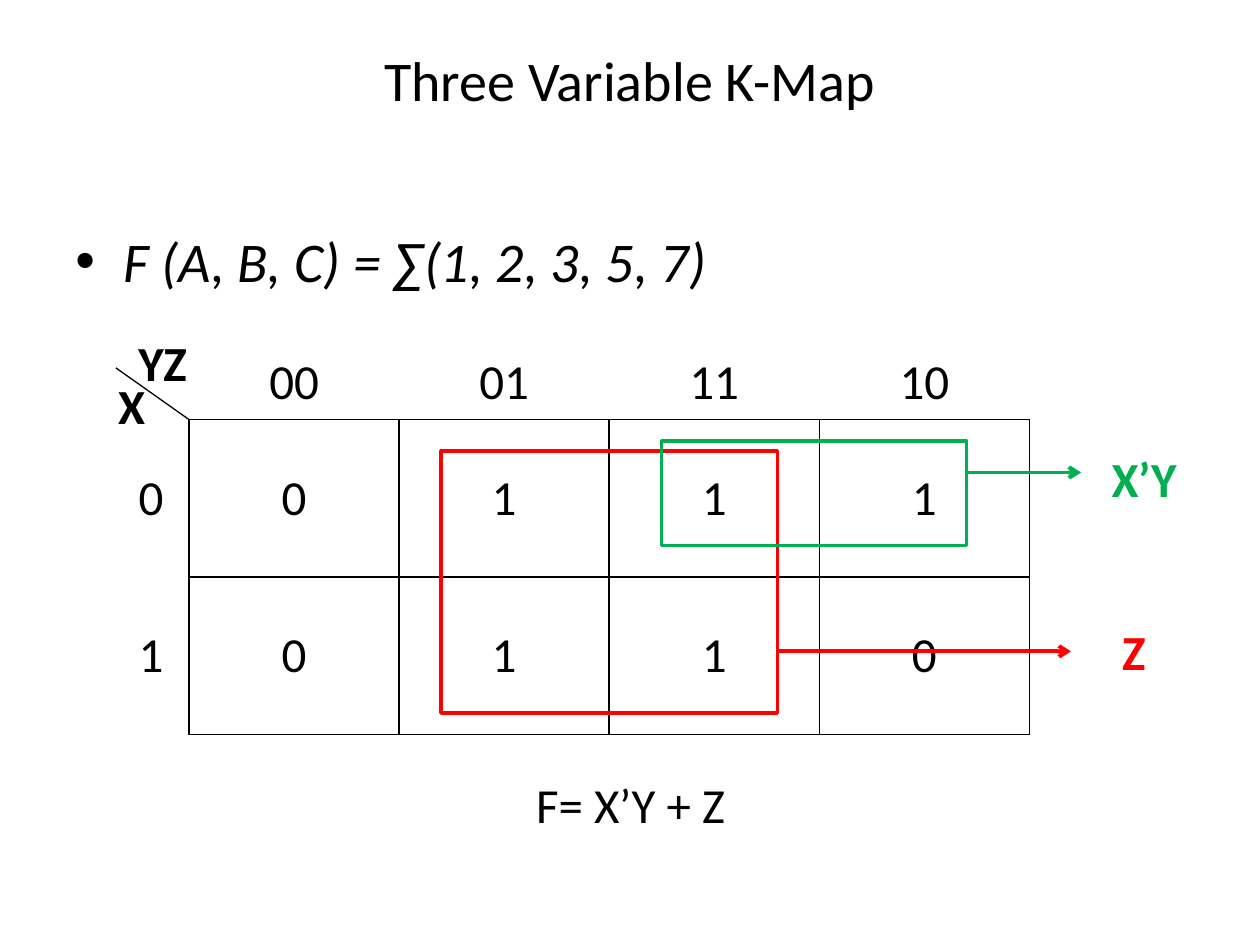
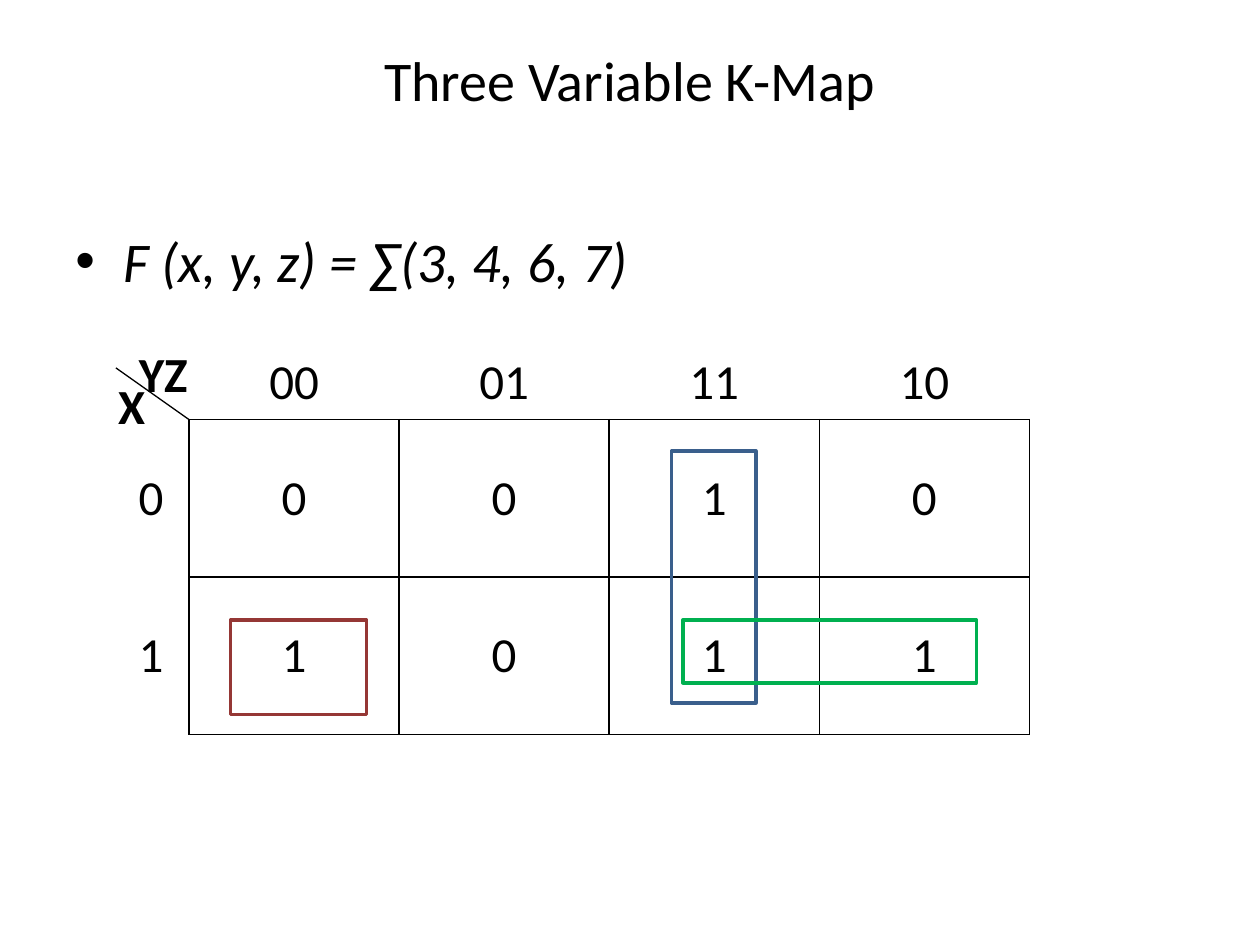
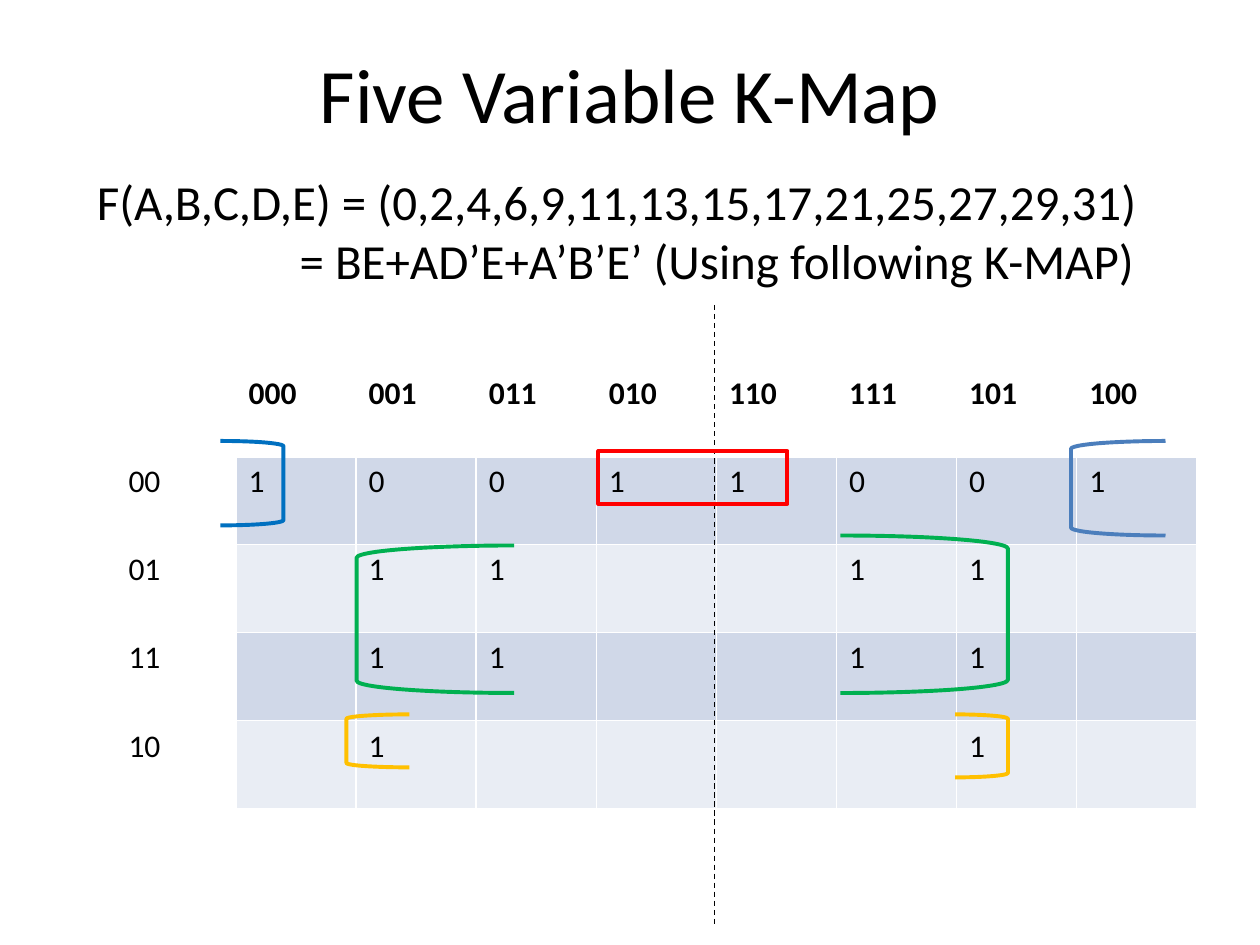
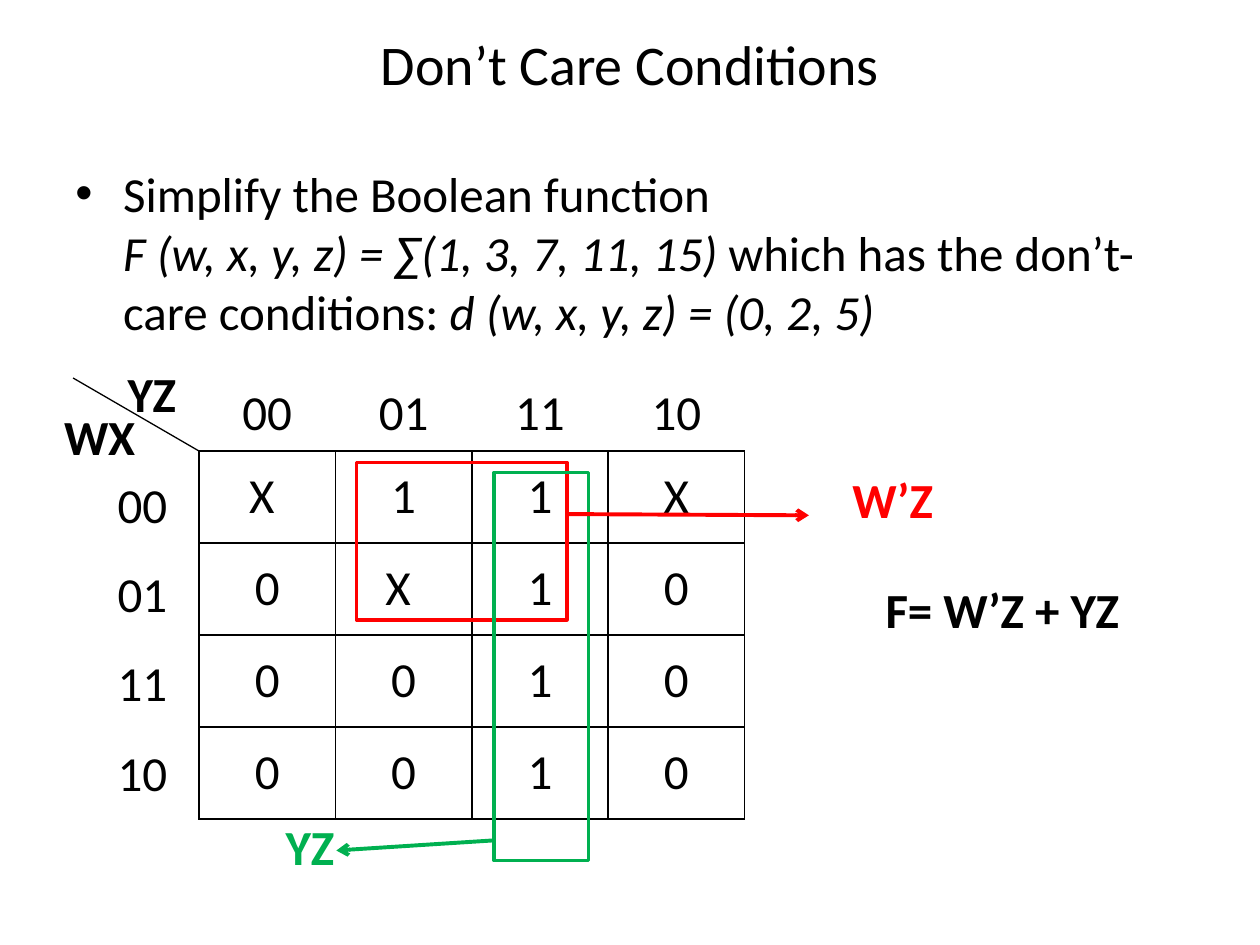
from lxml import etree
from pptx import Presentation
from pptx.dml.color import RGBColor
from pptx.enum.dml import MSO_LINE_DASH_STYLE as Dash
from pptx.enum.shapes import MSO_CONNECTOR, MSO_SHAPE as Shape
from pptx.enum.text import MSO_ANCHOR as Anchor, PP_ALIGN as Align
from pptx.oxml.ns import qn
from pptx.util import Inches, Pt

# Shared look
FONT = "Calibri"
BLACK = RGBColor(0x00, 0x00, 0x00)
WHITE = RGBColor(0xFF, 0xFF, 0xFF)
RED = RGBColor(0xFF, 0x00, 0x00)
GREEN = RGBColor(0x00, 0xB0, 0x50)
NAVY = RGBColor(0x3A, 0x5F, 0x8C)
MAROON = RGBColor(0x95, 0x37, 0x35)
BLUE = RGBColor(0x00, 0x70, 0xC0)
STEEL = RGBColor(0x4B, 0x7E, 0xBC)
AMBER = RGBColor(0xFF, 0xC0, 0x00)
BANDS = [RGBColor(0xD0, 0xD8, 0xE8), RGBColor(0xE9, 0xED, 0xF4)]
PLAIN_TABLE = "{2D5ABB26-0587-4C30-8999-92F81FD0307C}"
TEXT_SIZE = 28
GRAY_CODE = ["00", "01", "11", "10"]

# Content: boxes are (left, top, width, height) in inches
THREE_VARIABLE = {
    "title": "Three Variable K-Map", "title_box": (0.5, 0, 9, 1.25),
    "body_box": (0.5, 1.75, 9, 4.95), "body_size": 32,
    "grid_box": (1.5, 3.33, 6.67, 2.5),
    "columns_box": (1.5, 2.75, 6.67, 0.57),
    "rows_box": (1, 3.33, 0.5, 2.5), "row_names": ["0", "1"], "rows_align": Align.LEFT,
    "corner": ((0.92, 2.92), (1.5, 3.33)),
}
SUM_OF_FIVE = THREE_VARIABLE | {
    "body": [("F (A, B, C) = ∑(1, 2, 3, 5, 7)", True)],
    "values": ["0111", "0110"],
    "groups": [((3.5, 3.58, 2.67, 2.08), RED), ((5.25, 3.5, 2.42, 0.83), GREEN)],
    "arrows": [((7.67, 3.75), (8.58, 3.75), GREEN), ((6.17, 5.17), (8.5, 5.17), RED)],
    "labels": [
        ("YZ", (0.83, 2.58, 0.92, 0.58), BLACK, True),
        ("X", (0.67, 2.92, 0.75, 0.58), BLACK, True),
        ("X’Y", (8.58, 3.5, 1, 0.58), GREEN, True),
        ("Z", (8.5, 4.67, 1, 1), RED, True),
        ("F= X’Y + Z", (1.67, 5.92, 6.67, 0.92), BLACK, False),
    ],
}
SUM_OF_FOUR = THREE_VARIABLE | {
    "body": [("F (x, y, z) = ∑(3, 4, 6, 7)", True)],
    "values": ["0010", "1011"],
    "groups": [
        ((5.33, 3.58, 0.67, 2), NAVY),
        ((5.42, 4.92, 2.33, 0.5), GREEN),
        ((1.83, 4.92, 1.08, 0.75), MAROON),
    ],
    "arrows": [],
    "labels": [
        ("YZ", (0.92, 2.67, 0.75, 0.58), BLACK, True),
        ("X", (0.67, 2.92, 0.75, 0.58), BLACK, True),
    ],
}
DONT_CARE = {
    "title": "Don’t Care Conditions", "title_box": (0.5, 0, 9, 1),
    "body": [
        ("Simplify the Boolean function", False),
        ("\n", False),
        ("F (w, x, y, z) = ∑(1, 3, 7, 11, 15) ", True),
        ("which has the don’t-care conditions: ", False),
        ("d (w, x, y, z) = (0, 2, 5)", True),
    ],
    "body_box": (0.5, 1.25, 9, 5.83), "body_size": 28,
    "grid_box": (1.58, 3.58, 4.33, 2.92),
    "values": [["X ", "1", "1", "X"], ["0", "X ", "1", "0"], "0010", "0010"],
    "columns_box": (1.58, 3, 4.33, 0.57),
    "rows_box": (0.67, 3.67, 0.92, 2.83), "row_names": GRAY_CODE,
    "rows_align": Align.CENTER,
    "corner": ((1.58, 3.58), (0.58, 3)),
    "groups": [((2.83, 3.67, 1.67, 1.25), RED), ((3.92, 3.75, 0.75, 3.08), GREEN)],
    "arrows": [((4.5, 4.08), (6.42, 4.09), RED), ((3.92, 6.67), (2.67, 6.75), GREEN)],
    "labels": [
        ("YZ", (0.83, 2.83, 0.75, 0.58), BLACK, True),
        ("WX", (0.25, 3.17, 1.08, 0.58), BLACK, True),
        ("W’Z", (6.5, 3.67, 1.17, 0.58), RED, True),
        ("YZ", (2, 6.42, 0.92, 0.58), GREEN, True),
        ("F= W’Z + YZ", (6.58, 4.5, 2.75, 0.67), BLACK, True),
    ],
}
FIVE_VARIABLE = {
    "title": "Five Variable K-Map", "title_box": (0.5, 0.3, 9, 0.87),
    "formula": ["F(A,B,C,D,E) = (0,2,4,6,9,11,13,15,17,21,25,27,29,31)",
                "= BE+AD’E+A’B’E’ (Using following K-MAP)"],
    "formula_box": (0.67, 1.33, 8.83, 1), "formula_indent": 1.61,
    "grid_box": (0.92, 2.92, 8.58, 3.5),
    "values": [
        ["", "000", "001", "011", "010", "110", "111", "101", "100"],
        ["00", "1", "0", "0", "1", "1", "0", "0", "1"],
        ["01", "", "1", "1", "", "", "1", "1", ""],
        ["11", "", "1", "1", "", "", "1", "1", ""],
        ["10", "", "1", "", "", "", "", "1", ""],
    ],
    "mirror": ((5.67, 2.42), (5.67, 7.33)),
    "groups": [
        (Shape.RECTANGLE, (4.75, 3.58, 1.5, 0.42), RED),
        (Shape.RIGHT_BRACKET, (6.67, 4.25, 1.33, 1.25), GREEN),
        (Shape.LEFT_BRACKET, (2.83, 4.33, 1.25, 1.17), GREEN),
        (Shape.RIGHT_BRACKET, (1.75, 3.5, 0.5, 0.67), BLUE),
        (Shape.LEFT_BRACKET, (8.5, 3.5, 0.75, 0.75), STEEL),
        (Shape.LEFT_BRACKET, (2.75, 5.67, 0.5, 0.42), AMBER),
        (Shape.RIGHT_BRACKET, (7.58, 5.67, 0.42, 0.5), AMBER),
    ],
}


# Building blocks
def inches(box):
    return [Inches(length) for length in box]


def style(paragraph, size=TEXT_SIZE, color=BLACK, bold=False, align=None):
    paragraph.alignment = align
    for run in paragraph.runs:
        run.font.name, run.font.size, run.font.bold = FONT, Pt(size), bold
        run.font.color.rgb = color


def add_titled_slide(deck, title, box, size):
    slide = deck.slides.add_slide(deck.slide_layouts[5])
    heading = slide.shapes.title
    heading.left, heading.top, heading.width, heading.height = inches(box)
    heading.text_frame.text = title
    heading.text_frame.vertical_anchor = Anchor.MIDDLE
    style(heading.text_frame.paragraphs[0], size, align=Align.CENTER)
    return slide


def add_text(slide, text, box, anchor=Anchor.MIDDLE, **look):
    frame = slide.shapes.add_textbox(*inches(box)).text_frame
    frame.word_wrap = True
    frame.vertical_anchor = anchor
    frame.text = text
    for paragraph in frame.paragraphs:
        style(paragraph, **look)
    return frame


def add_bullet(slide, pieces, box, size):
    paragraph = add_text(slide, "", box, Anchor.TOP).paragraphs[0]
    for text, italic in pieces:
        if text == "\n":
            paragraph.add_line_break()
            continue
        run = paragraph.add_run()
        run.text, run.font.italic = text, italic
    style(paragraph, size)
    paragraph.space_before = Pt(size * 0.2)
    props = paragraph._p.get_or_add_pPr()
    props.set("marL", str(Inches(0.38)))
    props.set("indent", str(-Inches(0.38)))
    etree.SubElement(props, qn("a:buFont"), typeface="Arial")
    etree.SubElement(props, qn("a:buChar"), char="•")


def add_group(slide, preset, box, color, width):
    group = slide.shapes.add_shape(preset, *inches(box))
    group.shadow.inherit = False
    group.fill.background()
    group.line.color.rgb, group.line.width = color, Pt(width)


def add_line(slide, start, end, color=BLACK, width=0.75, arrow=False):
    line = slide.shapes.add_connector(MSO_CONNECTOR.STRAIGHT, *inches(start + end))
    line.line.color.rgb, line.line.width = color, Pt(width)
    if arrow:
        etree.SubElement(line.line._get_or_add_ln(), qn("a:tailEnd"), type="arrow")
    etree.SubElement(line._element.spPr, qn("a:effectLst"))
    return line


def set_border(cell, side, color, width):
    edge = etree.SubElement(cell._tc.get_or_add_tcPr(), qn(f"a:ln{side}"), w=str(Pt(width)))
    fill = etree.SubElement(edge, qn("a:solidFill"))
    etree.SubElement(fill, qn("a:srgbClr"), val=str(color))


def add_grid(slide, rows, box, border=None, anchor=Anchor.MIDDLE, **look):
    table = slide.shapes.add_table(len(rows), len(rows[0]), *inches(box)).table
    table.first_row = table.horz_banding = False
    table._tbl.tblPr.find(qn("a:tableStyleId")).text = PLAIN_TABLE
    for column in table.columns:
        column.width = Inches(box[2] / len(rows[0]))
    for row, values in zip(table.rows, rows):
        row.height = Inches(box[3] / len(rows))
        for cell, value in zip(row.cells, values):
            cell.text = value
            cell.vertical_anchor = anchor
            style(cell.text_frame.paragraphs[0], **look)
            if border is not None:
                for side in "LRTB":
                    set_border(cell, side, border, 1)
            cell.fill.background()
    return table


# Slides
def build_map(deck, kmap):
    slide = add_titled_slide(deck, kmap["title"], kmap["title_box"], 32)
    add_bullet(slide, kmap["body"], kmap["body_box"], kmap["body_size"])
    add_grid(slide, kmap["values"], kmap["grid_box"], BLACK, align=Align.CENTER)
    add_grid(slide, [GRAY_CODE], kmap["columns_box"], anchor=Anchor.TOP, align=Align.CENTER)
    add_grid(slide, [[name] for name in kmap["row_names"]], kmap["rows_box"],
             align=kmap["rows_align"])
    add_line(slide, *kmap["corner"])
    for box, color in kmap["groups"]:
        add_group(slide, Shape.RECTANGLE, box, color, 2)
    for start, end, color in kmap["arrows"]:
        add_line(slide, start, end, color, 2.25, arrow=True)
    for text, box, color, bold in kmap["labels"]:
        add_text(slide, text, box, color=color, bold=bold, align=Align.CENTER)


def build_five_variable(deck, kmap):
    slide = add_titled_slide(deck, kmap["title"], kmap["title_box"], 44)
    table = add_grid(slide, kmap["values"], kmap["grid_box"], WHITE, Anchor.TOP, size=18)
    # Bold code row with a thick rule, then banded values
    for cell in table.rows[0].cells:
        style(cell.text_frame.paragraphs[0], 18, bold=True)
        cell._tc.tcPr.find(qn("a:lnB")).set("w", str(Pt(3)))
    for r in range(1, len(kmap["values"])):
        for c in range(1, len(kmap["values"][r])):
            fill = table.cell(r, c).fill
            fill.solid()
            fill.fore_color.rgb = BANDS[(r - 1) % 2]
    add_line(slide, *kmap["mirror"]).line.dash_style = Dash.DASH
    for preset, box, color in kmap["groups"]:
        add_group(slide, preset, box, color, 2.25)
    formula = add_text(slide, "\n".join(kmap["formula"]), kmap["formula_box"])
    result = formula.paragraphs[1]._p.get_or_add_pPr()
    result.set("marL", str(Inches(kmap["formula_indent"])))


def main():
    deck = Presentation()
    deck.slide_width, deck.slide_height = Inches(10), Inches(7.5)
    build_map(deck, SUM_OF_FIVE)
    build_map(deck, SUM_OF_FOUR)
    build_five_variable(deck, FIVE_VARIABLE)
    build_map(deck, DONT_CARE)
    deck.save("out.pptx")


if __name__ == "__main__":
    main()
